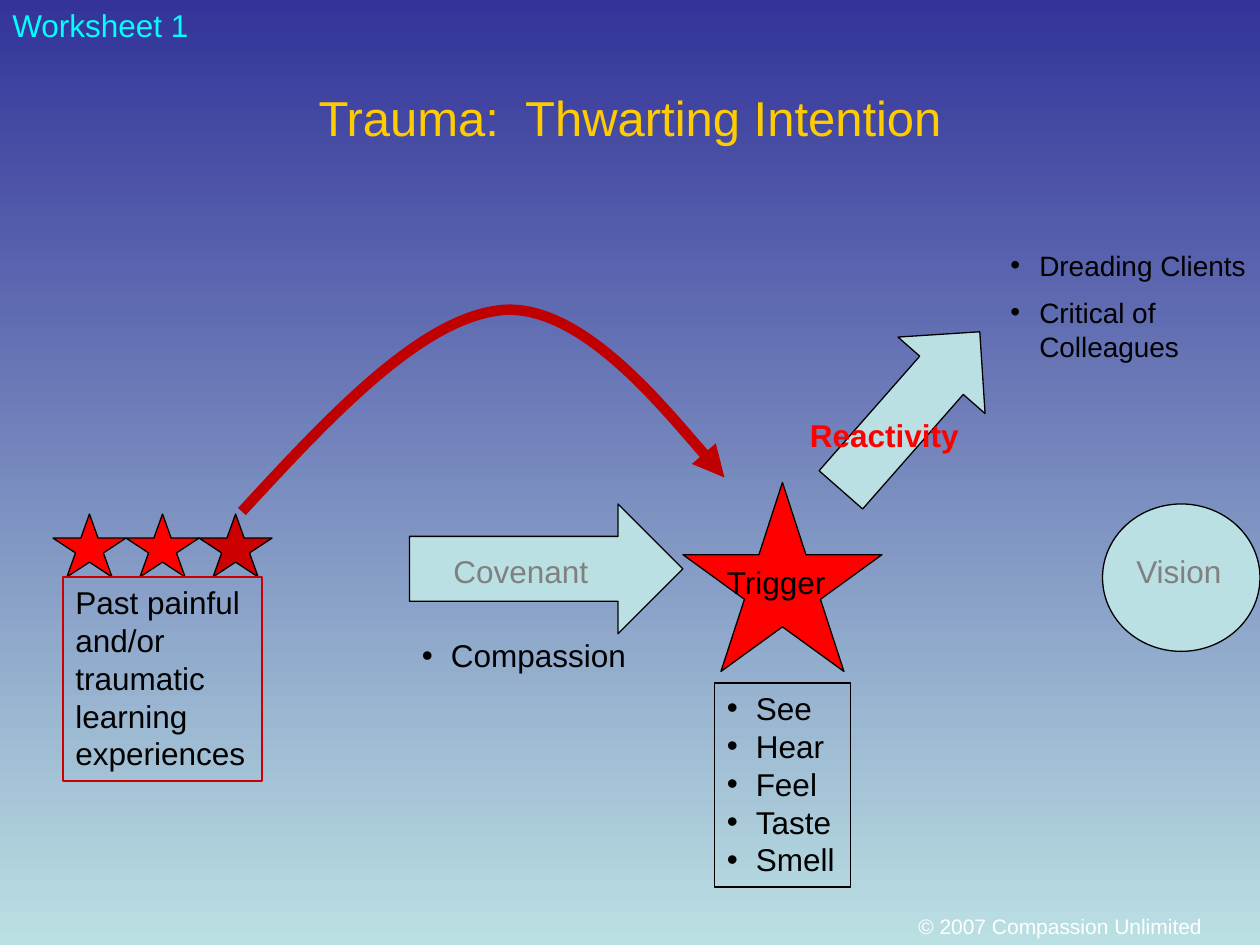
from lxml import etree
from pptx import Presentation
from pptx import util as u
from pptx.dml.color import RGBColor
from pptx.enum import shapes, text
from pptx.oxml import ns

COLORS = {
    "night": "333399", "ice": "BBE0E3", "gold": "FFCC00", "cyan": "00FFFF",
    "red": "FF0000", "crimson": "CC0000", "arc": "C00000",
    "black": "000000", "gray": "808080", "white": "FFFFFF",
}
BULLET_INDENT = 0.23


def rgb(name):
    return RGBColor.from_string(COLORS[name])


def box(left, top, width, height):
    return [u.Inches(value) for value in (left, top, width, height)]


def paint_background(slide):
    fill = slide.background.fill
    fill.gradient()
    fill.gradient_angle = 270
    for stop, color in zip(fill.gradient_stops, ("night", "ice")):
        stop.color.rgb = rgb(color)


def add_bullet(paragraph):
    properties = paragraph._p.get_or_add_pPr()
    indent = u.Inches(BULLET_INDENT)
    properties.set("marL", str(indent))
    properties.set("indent", str(-indent))
    font = etree.SubElement(properties, ns.qn("a:buFont"))
    font.set("typeface", "Arial")
    etree.SubElement(properties, ns.qn("a:buChar")).set("char", "•")


def write(frame, *lines, size=18, color="black", bold=False, bullet=False,
          align=text.PP_ALIGN.LEFT, anchor=text.MSO_ANCHOR.TOP, gap=0):
    frame.word_wrap = True
    frame.vertical_anchor = anchor
    for index, line in enumerate(lines):
        paragraph = frame.add_paragraph() if index else frame.paragraphs[0]
        paragraph.alignment = align
        if index and gap:
            paragraph.space_before = u.Pt(gap)
        if bullet:
            add_bullet(paragraph)
        run = paragraph.add_run()
        run.text = line
        run.font.name = "Arial"
        run.font.size = u.Pt(size)
        run.font.bold = bold
        run.font.color.rgb = rgb(color)


def add_label(slide, place, *lines, **style):
    write(slide.shapes.add_textbox(*box(*place)).text_frame, *lines, **style)


def add_figure(slide, kind, place, fill=None, line="black", width=0.75, angle=0):
    figure = slide.shapes.add_shape(kind, *box(*place))
    figure.shadow.inherit = False
    if fill:
        figure.fill.solid()
        figure.fill.fore_color.rgb = rgb(fill)
    else:
        figure.fill.background()
    figure.line.color.rgb = rgb(line)
    figure.line.width = u.Pt(width)
    figure.rotation = angle
    return figure


def add_curved_arrow(slide, start, controls, color, width):
    points = [(u.Inches(x), u.Inches(y)) for x, y in controls]
    builder = slide.shapes.build_freeform(u.Inches(start[0]), u.Inches(start[1]))
    builder.add_line_segments(points, close=False)
    arrow = builder.convert_to_shape()
    arrow.shadow.inherit = False
    arrow.fill.background()
    arrow.line.color.rgb = rgb(color)
    arrow.line.width = u.Pt(width)

    segments = list(arrow._element.iter(ns.qn("a:lnTo")))
    path = segments[0].getparent()
    for first in range(0, len(segments), 3):
        curve = etree.SubElement(path, ns.qn("a:cubicBezTo"))
        for segment in segments[first:first + 3]:
            curve.append(segment[0])
            path.remove(segment)
    tail = etree.SubElement(arrow.line._get_or_add_ln(), ns.qn("a:tailEnd"))
    tail.set("type", "triangle")


def main():
    deck = Presentation()
    deck.slide_width, deck.slide_height = u.Inches(10), u.Inches(7.5)
    slide = deck.slides.add_slide(deck.slide_layouts[6])
    paint_background(slide)
    preset = shapes.MSO_SHAPE
    center = text.PP_ALIGN.CENTER

    add_label(slide, (0.5, 0.3, 9, 1.25), "Trauma:  Thwarting Intention",
              size=28, color="gold", align=center, anchor=text.MSO_ANCHOR.MIDDLE)

    add_figure(slide, preset.RIGHT_ARROW, (3.25, 4, 2.17, 1.03), "ice")
    add_label(slide, (3.5, 4.33, 1.33, 0.4), "Covenant", color="gray")

    add_figure(slide, preset.STAR_5_POINT, (5.42, 3.83, 1.58, 1.5), "red")
    add_label(slide, (5.67, 4.42, 1, 0.4), "Trigger")

    add_figure(slide, preset.RIGHT_ARROW, (6.39, 2.8, 1.67, 0.92), "ice", angle=311.3)
    add_label(slide, (6.33, 3.25, 1.67, 0.4), "Reactivity", color="red", bold=True)

    for index, color in enumerate(("red", "red", "crimson")):
        add_figure(slide, preset.STAR_5_POINT,
                   (0.42 + 0.58 * index, 4.08, 0.58, 0.5), color)
    add_curved_arrow(slide, (1.92, 4.06),
                     [(2.64, 3.28), (3.36, 2.51), (4, 2.46),
                      (4.63, 2.42), (5.75, 3.79), (5.75, 3.79)], "arc", 6)

    past = add_figure(slide, preset.RECTANGLE, (0.5, 4.58, 1.58, 1.62),
                      line="crimson", width=1)
    write(past.text_frame, "Past painful and/or traumatic learning experiences")

    senses = add_figure(slide, preset.RECTANGLE, (5.67, 5.42, 1.08, 1.62))
    write(senses.text_frame, "See", "Hear", "Feel", "Taste", "Smell", bullet=True)

    add_figure(slide, preset.OVAL, (8.75, 4, 1.25, 1.17), "ice")
    add_label(slide, (8.92, 4.33, 1, 0.4), "Vision", color="gray")

    add_label(slide, (7.92, 1.92, 2.08, 1.04), "Dreading Clients",
              "Critical of Colleagues", size=16, bullet=True, gap=8)
    add_label(slide, (6.83, 7, 3.17, 0.5), "© 2007 Compassion Unlimited",
              size=12, color="white", align=center, anchor=text.MSO_ANCHOR.BOTTOM)
    add_label(slide, (3.25, 5, 1.83, 0.71), "Compassion", bullet=True)
    add_label(slide, (0, 0, 1.83, 0.4), "Worksheet 1", color="cyan")

    deck.save("out.pptx")


if __name__ == "__main__":
    main()
